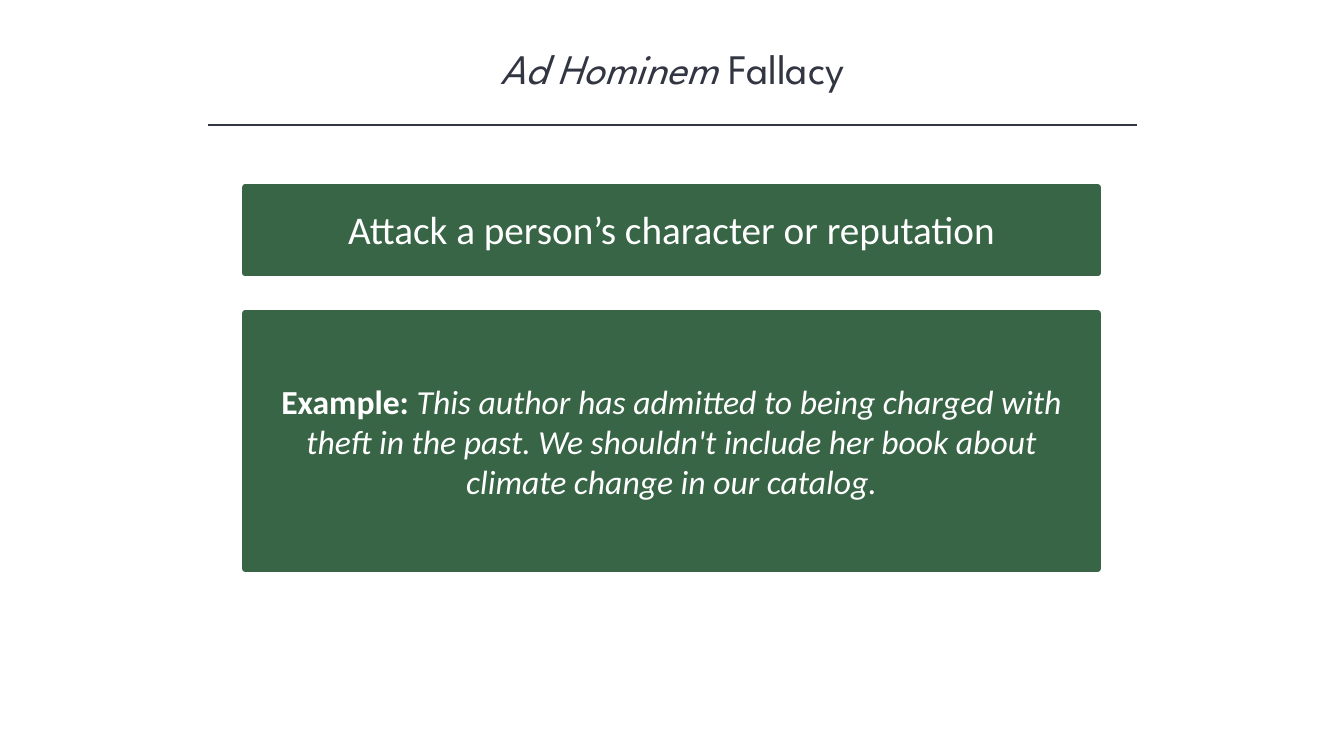
"""Build the Ad Hominem fallacy slide."""
from dataclasses import dataclass

from lxml.etree import SubElement
from pptx import Presentation
from pptx.dml.color import RGBColor
from pptx.enum.shapes import MSO_CONNECTOR, MSO_SHAPE
from pptx.enum.text import MSO_ANCHOR as Anchor
from pptx.enum.text import MSO_AUTO_SIZE as AutoSize
from pptx.enum.text import PP_ALIGN as Align
from pptx.oxml.ns import qn
from pptx.slide import Slide
from pptx.text.text import TextFrame
from pptx.util import Inches, Pt

INK = RGBColor(0x32, 0x35, 0x42)
GREEN = RGBColor(0x38, 0x65, 0x46)
WHITE = RGBColor(0xFF, 0xFF, 0xFF)
PANEL_LEFT, PANEL_WIDTH = 2.43, 8.46


@dataclass(frozen=True)
class Phrase:
    text: str
    bold: bool = False
    italic: bool = False


@dataclass(frozen=True)
class Wording:
    phrases: tuple[Phrase, ...]
    size: int
    font: str = "Calibri"
    color: RGBColor = WHITE
    anchor: Anchor = Anchor.MIDDLE
    auto_size: AutoSize = AutoSize.NONE


@dataclass(frozen=True)
class Panel:
    top: float
    height: float
    outlined: bool
    wording: Wording | None = None


TITLE = Wording(
    (Phrase("Ad Hominem ", italic=True), Phrase("Fallacy")),
    30, "League Spartan", INK, Anchor.TOP, AutoSize.SHAPE_TO_FIT_TEXT,
)
DEFINITION = Wording(
    (Phrase("Attack a person’s character or reputation"),),
    28, auto_size=AutoSize.SHAPE_TO_FIT_TEXT,
)
EXAMPLE = Wording(
    (
        Phrase("Example: ", bold=True),
        Phrase(
            "This author has admitted to being charged with theft in the past. "
            "We shouldn't include her book about climate change in our catalog.",
            italic=True,
        ),
    ),
    24,
)
PANELS = (
    Panel(1.86, 0.85, True),
    Panel(1.99, 0.57, False, DEFINITION),
    Panel(3.11, 2.53, True, EXAMPLE),
)


def write(frame: TextFrame, wording: Wording) -> None:
    """Fill a text frame with centred, formatted phrases."""
    frame.word_wrap = True
    frame.auto_size = wording.auto_size
    frame.vertical_anchor = wording.anchor
    paragraph = frame.paragraphs[0]
    paragraph.alignment = Align.CENTER
    for phrase in wording.phrases:
        run = paragraph.add_run()
        run.text = phrase.text
        run.font.name = wording.font
        run.font.size = Pt(wording.size)
        run.font.color.rgb = wording.color
        run.font.bold = phrase.bold
        run.font.italic = phrase.italic


def add_title(slide: Slide) -> None:
    """Add the heading and the rule beneath it."""
    heading = slide.shapes.add_textbox(
        Inches(1.67), Inches(0.37), Inches(10), Inches(0.61)
    )
    write(heading.text_frame, TITLE)
    rule = slide.shapes.add_connector(
        MSO_CONNECTOR.STRAIGHT,
        Inches(2.06), Inches(1.24), Inches(11.28), Inches(1.24),
    )
    rule.line.color.rgb = INK
    rule.line.width = Pt(1)
    SubElement(rule._element.spPr, qn("a:effectLst"))


def add_panel(slide: Slide, panel: Panel) -> None:
    """Add one green panel with its wording, if any."""
    block = slide.shapes.add_shape(
        MSO_SHAPE.RECTANGLE, Inches(PANEL_LEFT), Inches(panel.top),
        Inches(PANEL_WIDTH), Inches(panel.height),
    )
    block.shadow.inherit = False
    block.fill.solid()
    block.fill.fore_color.rgb = GREEN
    if panel.outlined:
        block.line.color.rgb = GREEN
        block.line.width = Pt(4.5)
    else:
        block.line.fill.background()
    if panel.wording:
        write(block.text_frame, panel.wording)


def main() -> None:
    """Assemble and save the slide."""
    deck = Presentation()
    deck.slide_width, deck.slide_height = Inches(13.33), Inches(7.5)
    slide = deck.slides.add_slide(deck.slide_layouts[6])
    add_title(slide)
    for panel in PANELS:
        add_panel(slide, panel)
    deck.save("out.pptx")


if __name__ == "__main__":
    main()
